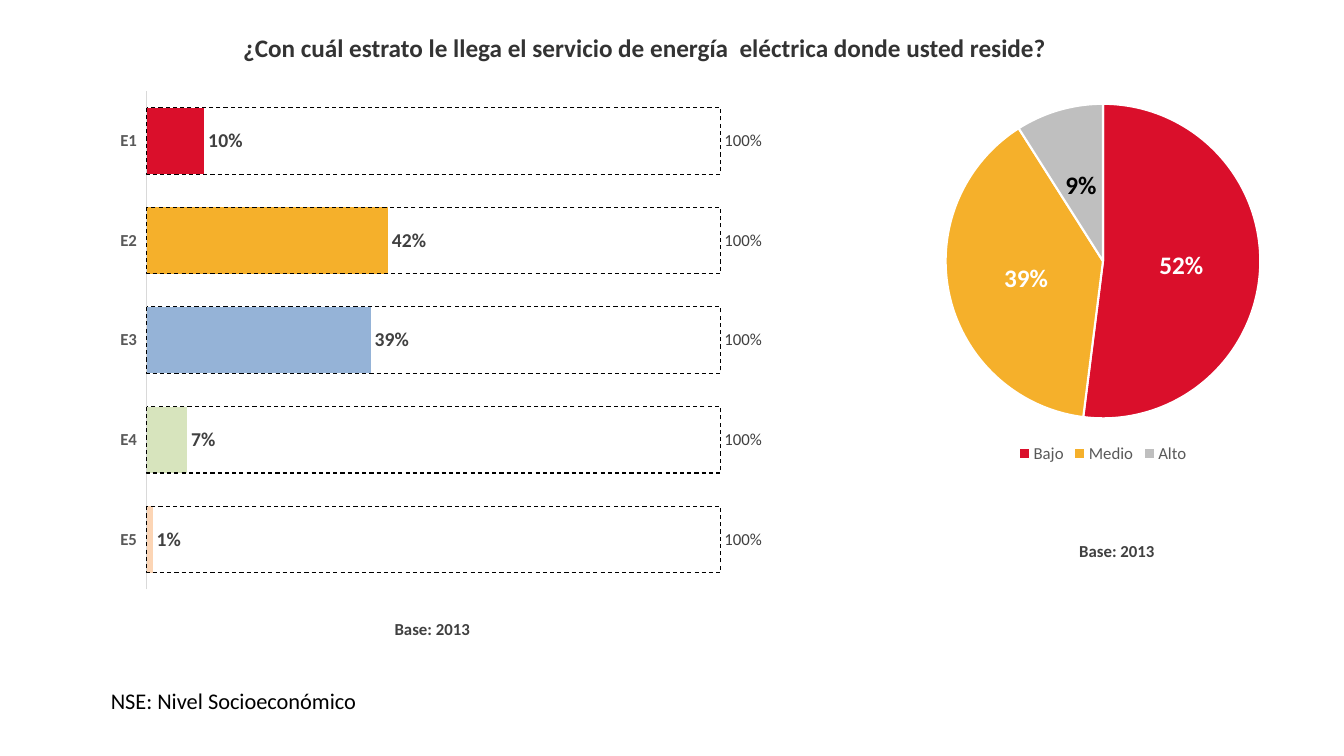
from lxml import etree
from pptx import Presentation
from pptx.chart.data import CategoryChartData
from pptx.dml.color import RGBColor
from pptx.enum.chart import XL_CHART_TYPE, XL_LABEL_POSITION, XL_LEGEND_POSITION, XL_TICK_LABEL_POSITION, XL_TICK_MARK
from pptx.enum.dml import MSO_LINE
from pptx.enum.text import MSO_ANCHOR, PP_ALIGN
from pptx.oxml.ns import qn
from pptx.util import Inches, Pt

BAR, PIE = XL_CHART_TYPE.BAR_CLUSTERED, XL_CHART_TYPE.PIE
OUTSIDE, CENTER = XL_LABEL_POSITION.OUTSIDE_END, XL_LABEL_POSITION.CENTER
BOTTOM = XL_LEGEND_POSITION.BOTTOM
NO_TICK, TICK_LOW = XL_TICK_MARK.NONE, XL_TICK_LABEL_POSITION.LOW
DASH, TOP, MIDDLE = MSO_LINE.DASH, MSO_ANCHOR.TOP, MSO_ANCHOR.MIDDLE
ALIGN_LEFT, ALIGN_CENTER, ALIGN_RIGHT = PP_ALIGN.LEFT, PP_ALIGN.CENTER, PP_ALIGN.RIGHT

THEME = {
    "title": {"size": 18, "bold": True, "color": "333333"},
    "base": {"size": 12, "bold": True, "color": "404040"},
    "note": {"size": 16, "bold": False, "color": "000000"},
    "chart": {"size": 10, "bold": False, "color": "000000"},
    "axis": {"size": 12, "bold": True, "color": "595959"},
    "legend": {"size": 12, "bold": False, "color": "595959"},
    "share": {"size": 14, "bold": True, "color": "404040"},
    "total": {"size": 12, "bold": False, "color": "404040"},
    "slice": {"size": 18, "bold": True, "color": "FFFFFF"},
    "dark_slice": {"size": 18, "bold": True, "color": "000000"},
    "axis_line": "D9D9D9",
    "frame_line": "000000",
    "slice_line": "FFFFFF",
    "bars": ["DA0F2B", "F5B02B", "95B3D7", "D7E4BD", "FCD5B5"],
    "slices": ["DA0F2B", "F5B02B", "BFBFBF"],
}


def set_font(font, style):
    values = {"name": "Calibri", "size": Pt(style["size"]), "bold": style["bold"]}
    for name, value in values.items():
        setattr(font, name, value)
    font.color.rgb = RGBColor.from_string(style["color"])


def place_plot(chart, **fractions):
    plot_area = chart.element.find(".//" + qn("c:plotArea"))
    for old_layout in plot_area.findall(qn("c:layout")):
        plot_area.remove(old_layout)
    layout = etree.Element(qn("c:layout"))
    manual = etree.SubElement(layout, qn("c:manualLayout"))
    settings = {"layoutTarget": "inner", "xMode": "edge", "yMode": "edge", **fractions}
    for name, value in settings.items():
        etree.SubElement(manual, qn("c:" + name)).set("val", str(value))
    plot_area.insert(0, layout)


deck = Presentation()
deck.slide_width, deck.slide_height = Inches(13.33), Inches(7.5)
page = deck.slides.add_slide(deck.slide_layouts[5])

title = page.shapes.title
bar_base, note, pie_base = [page.shapes.add_textbox(0, 0, 0, 0) for _ in range(3)]
texts = [
    (title, "¿Con cuál estrato le llega el servicio de energía  eléctrica donde usted reside?",
     (2.22, 0.25, 8.35, 0.44), "title", ALIGN_CENTER, MIDDLE, False),
    (bar_base, "Base: 2013", (3.8, 6.15, 0.96, 0.25), "base", ALIGN_RIGHT, TOP, False),
    (note, "NSE: Nivel Socioeconómico", (1, 6.77, 3.11, 0.37), "note", ALIGN_LEFT, TOP, True),
    (pie_base, "Base: 2013", (10.59, 5.38, 0.96, 0.25), "base", ALIGN_RIGHT, TOP, False),
]
for box, wording, place, style, alignment, anchor, wrap in texts:
    box.left, box.top, box.width, box.height = map(Inches, place)
    frame = box.text_frame
    frame.word_wrap, frame.vertical_anchor = wrap, anchor
    para = frame.paragraphs[0]
    para.alignment = alignment
    span = para.add_run()
    span.text = wording
    set_font(span.font, THEME[style])
    if style == "base":
        para.line_spacing = Pt(10)

bar_data = CategoryChartData(number_format="0%")
bar_data.categories = ["E1", "E2", "E3", "E4", "E5"]
bar_data.add_series("Series 1", [0.1, 0.42, 0.39, 0.07, 0.01])
bar_data.add_series("Series 2", [1] * 5)
bar_chart = page.shapes.add_chart(
    BAR, Inches(1.09), Inches(0.8), Inches(7.34), Inches(5.15), bar_data).chart

pie_data = CategoryChartData(number_format="0%")
pie_data.categories = ["Bajo", "Medio", "Alto"]
pie_data.add_series("Series 1", [0.52, 0.39, 0.09])
pie_chart = page.shapes.add_chart(
    PIE, Inches(8.7), Inches(0.88), Inches(4.48), Inches(3.76), pie_data).chart

for chart in (bar_chart, pie_chart):
    set_font(chart.font, THEME["chart"])
    chart.has_title = False
    chart.has_legend = chart is pie_chart

place_plot(bar_chart, x=0.05, y=0.02, w=0.93, h=0.96)
place_plot(pie_chart, x=0.15, y=0.04, w=0.7, h=0.83)

legend = pie_chart.legend
legend.position, legend.include_in_layout = BOTTOM, False
set_font(legend.font, THEME["legend"])

bar_plot = bar_chart.plots[0]
bar_plot.gap_width, bar_plot.overlap, bar_plot.vary_by_categories = 50, 100, False
pie_chart.plots[0].vary_by_categories = True

strata = bar_chart.category_axis
strata.reverse_order = True
strata.major_tick_mark = strata.minor_tick_mark = NO_TICK
strata.tick_label_position = TICK_LOW
strata.format.line.color.rgb = RGBColor.from_string(THEME["axis_line"])
strata.format.line.width = Pt(0.75)
set_font(strata.tick_labels.font, THEME["axis"])

scale = bar_chart.value_axis
scale.minimum_scale, scale.maximum_scale = 0, 1.2
scale.has_major_gridlines = scale.visible = False

shares, totals = bar_plot.series
slices = pie_chart.plots[0].series[0]
for series, style, position in [
    (shares, "share", OUTSIDE), (totals, "total", OUTSIDE), (slices, "slice", CENTER),
]:
    labels = series.data_labels
    values = {"show_value": True, "position": position,
              "number_format": "0%", "number_format_is_linked": False}
    for name, value in values.items():
        setattr(labels, name, value)
    set_font(labels.font, THEME[style])

for series, palette in [(shares, "bars"), (slices, "slices")]:
    for index, color in enumerate(THEME[palette]):
        fill = series.points[index].format.fill
        fill.solid()
        fill.fore_color.rgb = RGBColor.from_string(color)

for index in range(len(THEME["slices"])):
    border = slices.points[index].format.line
    border.color.rgb = RGBColor.from_string(THEME["slice_line"])
    border.width = Pt(1.5)

high_label = slices.points[2].data_label
set_font(high_label.font, THEME["dark_slice"])
high_label.position = CENTER

totals.format.fill.background()
outline = totals.format.line
outline.color.rgb = RGBColor.from_string(THEME["frame_line"])
outline.width, outline.dash_style = Pt(0.75), DASH

deck.save("out.pptx")
